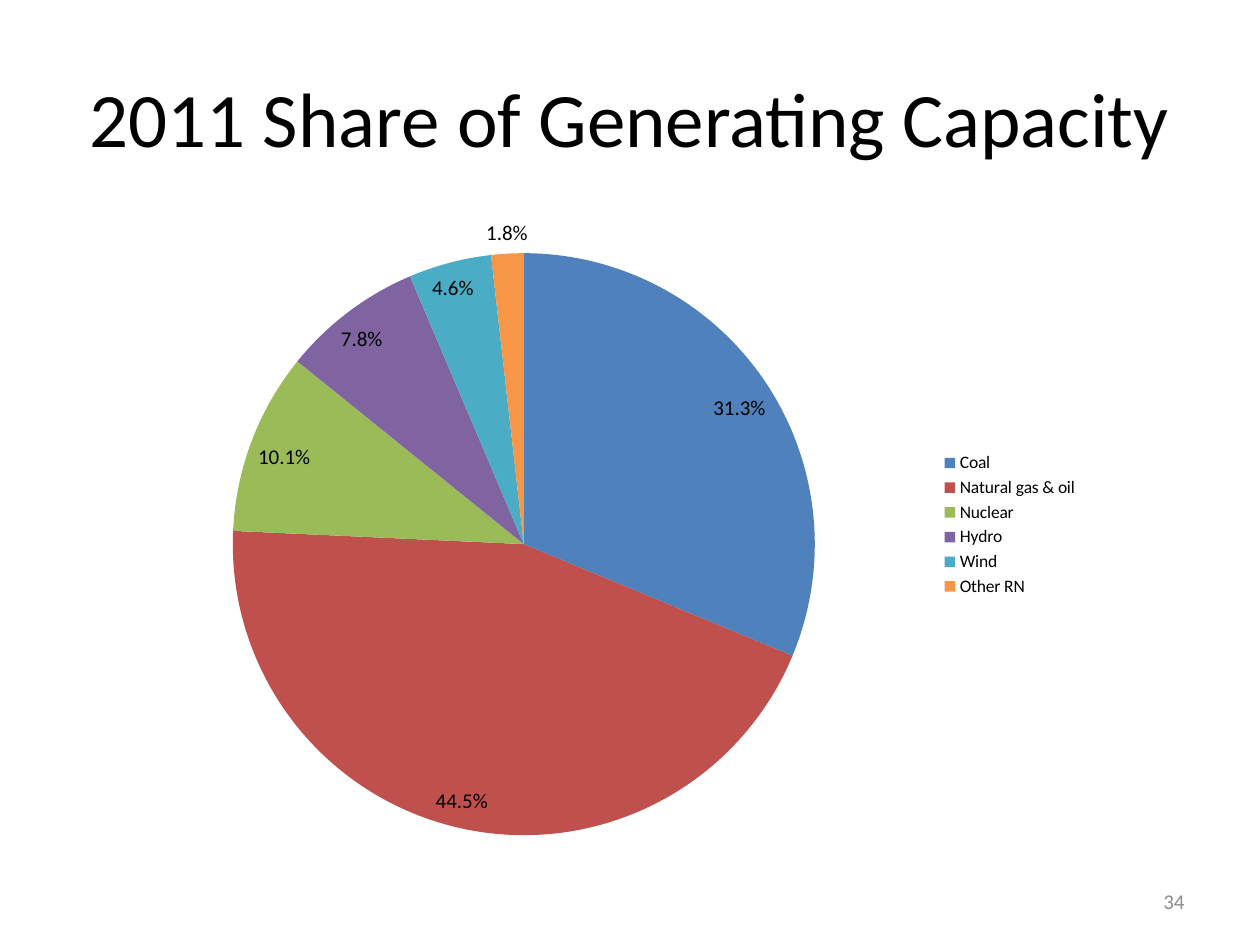
from dataclasses import dataclass

from lxml import etree
from pptx import Presentation
from pptx import util as u
from pptx.chart.data import CategoryChartData
from pptx.dml.color import RGBColor
from pptx.enum import chart as charts, text
from pptx.oxml.ns import qn

FONT = "Calibri"


@dataclass(frozen=True)
class Source:
    name: str
    share: float
    color: str


@dataclass(frozen=True)
class Caption:
    wording: str
    left: float
    top: float
    width: float
    height: float
    size: int
    color: str
    align: text.PP_ALIGN


SOURCES = [
    Source("Coal", 0.313, "4F81BD"),
    Source("Natural gas & oil", 0.445, "C0504D"),
    Source("Nuclear", 0.101, "9BBB59"),
    Source("Hydro", 0.078, "8064A2"),
    Source("Wind", 0.046, "4BACC6"),
    Source("Other RN", 0.018, "F79646"),
]

CAPTIONS = [
    Caption("2011 Share of Generating Capacity", 0.5, 0.3, 9, 1.25,
            44, "000000", text.PP_ALIGN.CENTER),
    Caption("34", 7.17, 6.95, 2.33, 0.4, 12, "8C8C8C", text.PP_ALIGN.RIGHT),
]


def rgb(value: str) -> RGBColor:
    return RGBColor.from_string(value)


def style_font(font, size: int, color: str) -> None:
    font.name = FONT
    font.size = u.Pt(size)
    font.color.rgb = rgb(color)


def add_caption(slide, caption: Caption) -> None:
    box = slide.shapes.add_textbox(
        u.Inches(caption.left), u.Inches(caption.top),
        u.Inches(caption.width), u.Inches(caption.height))
    frame = box.text_frame
    frame.word_wrap = True
    frame.vertical_anchor = text.MSO_ANCHOR.MIDDLE
    frame.text = caption.wording
    paragraph = frame.paragraphs[0]
    paragraph.alignment = caption.align
    style_font(paragraph.runs[0].font, caption.size, caption.color)


def place_plot(pie, x: float, y: float, w: float, h: float) -> None:
    plot_area = pie._chartSpace.chart.plotArea
    for old in plot_area.findall(qn("c:layout")):
        plot_area.remove(old)
    layout = etree.Element(qn("c:layout"))
    manual = etree.SubElement(layout, qn("c:manualLayout"))
    settings = {"layoutTarget": "inner", "xMode": "edge", "yMode": "edge",
                "x": x, "y": y, "w": w, "h": h}
    for tag, value in settings.items():
        etree.SubElement(manual, qn(f"c:{tag}")).set("val", str(value))
    plot_area.insert(0, layout)


def add_capacity_pie(slide, sources: list[Source]) -> None:
    shares = CategoryChartData(number_format="0.0%")
    shares.categories = [source.name for source in sources]
    shares.add_series("Series 1", [source.share for source in sources])
    pie = slide.shapes.add_chart(
        charts.XL_CHART_TYPE.PIE, u.Inches(0.83), u.Inches(1.58),
        u.Inches(7.83), u.Inches(5.17), shares).chart
    style_font(pie.font, 10, "000000")
    pie.has_title = False
    pie.has_legend = True
    pie.legend.position = charts.XL_LEGEND_POSITION.RIGHT
    pie.legend.include_in_layout = False
    place_plot(pie, 0.13, 0.08, 0.59, 0.9)

    plot = pie.plots[0]
    plot.vary_by_categories = True
    for index, source in enumerate(sources):
        fill = plot.series[0].points[index].format.fill
        fill.solid()
        fill.fore_color.rgb = rgb(source.color)

    labels = plot.series[0].data_labels
    labels.show_value = True
    labels.show_percentage = False
    labels.number_format = "0.0%"
    labels.number_format_is_linked = False
    labels.position = charts.XL_LABEL_POSITION.BEST_FIT
    style_font(labels.font, 12, "000000")


def main() -> None:
    deck = Presentation()
    deck.slide_width = u.Inches(10)
    deck.slide_height = u.Inches(7.5)
    slide = deck.slides.add_slide(deck.slide_layouts[6])
    for caption in CAPTIONS:
        add_caption(slide, caption)
    add_capacity_pie(slide, SOURCES)
    deck.save("out.pptx")


if __name__ == "__main__":
    main()
